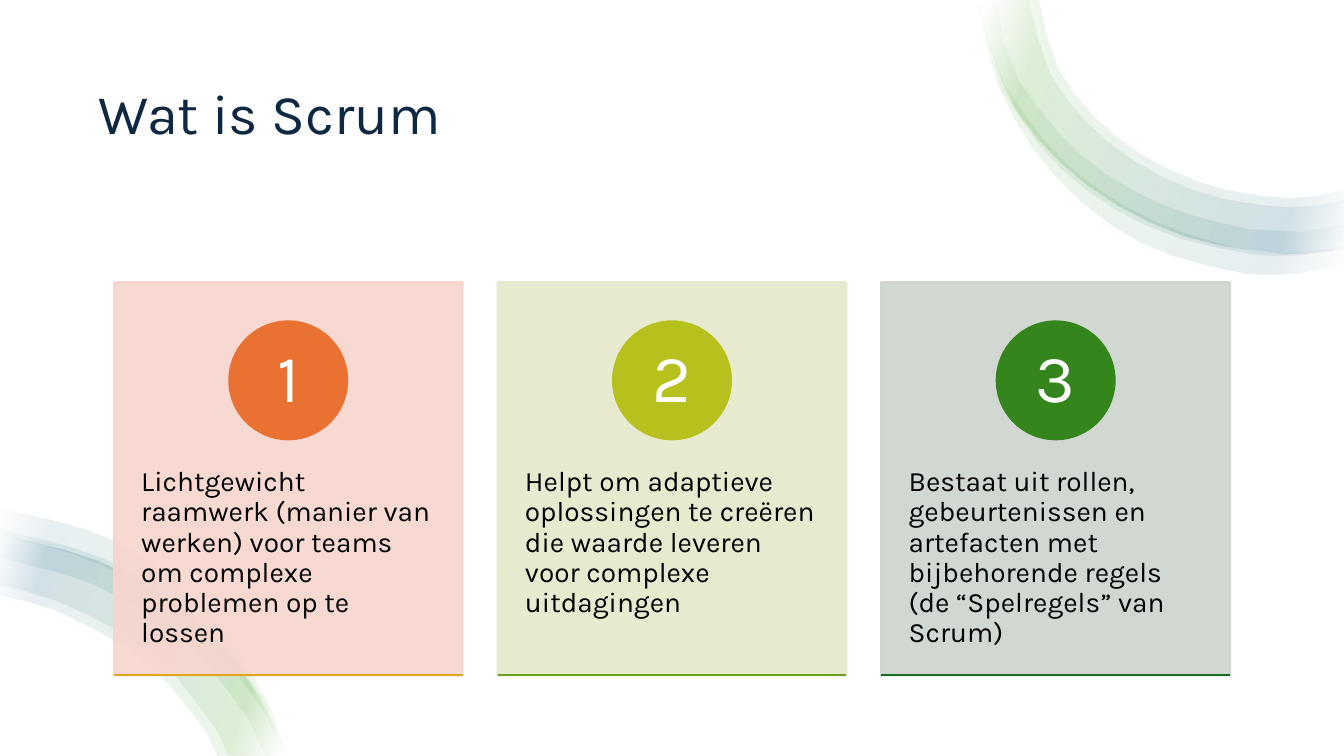
from math import dist

from lxml.etree import SubElement
from pptx import Presentation
from pptx.dml.color import RGBColor
from pptx.enum.shapes import MSO_CONNECTOR, MSO_SHAPE
from pptx.enum.text import MSO_ANCHOR, PP_ALIGN
from pptx.oxml.ns import qn
from pptx.util import Cm, Pt

FONT = "Karla"
SWIRL_UNIT = 2.54
SWIRL_STOPS = [(2, "FFFFFF"), (16, "4EA72E"), (85, "156082"), (100, "FFFFFF")]

RIGHT_RIM = [(.03, 0), (.04, .2), (.39, 1.1), (1.1, 1.84), (2.04, 2.33),
             (3.09, 2.51), (3.63, 2.45)]
RIGHT_BANDS = [
    (RIGHT_RIM,
     [(.61, 0), (.8, .68), (1.36, 1.34), (2.17, 1.79), (3.09, 1.96), (3.63, 1.88)]),
    (RIGHT_RIM,
     [(.51, 0), (.72, .73), (1.3, 1.41), (2.14, 1.88), (3.09, 2.05), (3.63, 1.98)]),
    ([(.03, 0), (.08, .43), (.24, .89), (.84, 1.68), (1.69, 2.24),
      (2.69, 2.51), (3.21, 2.52), (3.63, 2.46)],
     [(.19, 0), (.25, .39), (.42, .81), (1.01, 1.52), (1.8, 2.01),
      (2.72, 2.27), (3.19, 2.29), (3.63, 2.23)]),
    ([(.01, 0), (.02, .13), (.21, .87), (.76, 1.74), (1.61, 2.4),
      (2.66, 2.71), (3.22, 2.7), (3.63, 2.62)],
     [(.04, 0), (.1, .37), (.27, .84), (.89, 1.63), (1.73, 2.18),
      (2.69, 2.48), (3.2, 2.5), (3.63, 2.45)]),
]

LEFT_RIM = [(2.82, 2.5), (2.76, 2.3), (2.35, 1.59), (1.73, 1), (.96, .56), (0, .3)]
LEFT_BANDS = [
    ([(2.85, 2.5), (2.71, 2.08), (2.1, 1.11), (1.15, .38), (0, .04)],
     [(2.79, 2.5), (2.64, 2.11), (1.95, 1.24), (1.02, .62), (0, .3)]),
    (LEFT_RIM,
     [(2.15, 2.5), (2.05, 2.28), (1.43, 1.56), (.53, 1.05), (0, .91)]),
    ([(2.83, 2.5), (2.68, 2.05), (2, 1.18), (1.06, .56), (0, .26)],
     [(2.63, 2.5), (2.47, 2.15), (1.82, 1.36), (.94, .81), (0, .54)]),
    (LEFT_RIM,
     [(2.26, 2.5), (2.14, 2.24), (1.5, 1.48), (.56, .96), (0, .81)]),
]

CARDS = [
    ("Lichtgewicht raamwerk (manier van werken) voor teams om complexe "
     "problemen op te lossen", "F7D5CE", "E97132", "E0A61D"),
    ("Helpt om adaptieve oplossingen te creëren die waarde leveren voor "
     "complexe uitdagingen", "E5E8CA", "B7C11E", "6BA31D"),
    ("Bestaat uit rollen, gebeurtenissen en artefacten met bijbehorende "
     "regels (de “Spelregels” van Scrum)", "CCD4CD", "34861C", "196B24"),
]


def paint(color_owner, color):
    color_owner.solid()
    color_owner.fore_color.rgb = RGBColor.from_string(color)


def assign(target, values):
    for name, value in values.items():
        setattr(target, name, value)


def set_alpha(color_element, percent):
    SubElement(color_element, qn("a:alpha"), val=str(percent * 1000))


def write(shape, text, size, color, frame_format, paragraph_format):
    frame = shape.text_frame
    assign(frame, {"word_wrap": True, **frame_format})
    paragraph = frame.paragraphs[0]
    paragraph.text = text
    assign(paragraph, {"line_spacing": 0.9, **paragraph_format})
    font = paragraph.runs[0].font
    assign(font, {"name": FONT, "size": Pt(size)})
    paint(font.fill, color)


def smooth(points, density=3):
    last = len(points) - 1
    tangents = []
    for index in range(last + 1):
        before, after = points[max(index - 1, 0)], points[min(index + 1, last)]
        length = dist(before, points[index]) + dist(points[index], after)
        tangents.append([(b - a) / length for a, b in zip(before, after)])
    curve = [points[0]]
    for index in range(last):
        start, end = points[index], points[index + 1]
        length = dist(start, end)
        steps = max(1, round(length * density))
        for step in range(1, steps + 1):
            t = step / steps
            curve.append([
                (2 * t**3 - 3 * t**2 + 1) * start[axis]
                + (3 * t**2 - 2 * t**3) * end[axis]
                + (t**3 - 2 * t**2 + t) * length * tangents[index][axis]
                + (t**3 - t**2) * length * tangents[index + 1][axis]
                for axis in (0, 1)])
    return curve


def add_swirl(slide, left, top, bands, angle):
    for outer, inner in bands:
        outline = [(Cm(x * SWIRL_UNIT), Cm(y * SWIRL_UNIT))
                   for x, y in smooth(outer) + smooth(inner)[::-1]]
        builder = slide.shapes.build_freeform(*outline[0])
        builder.add_line_segments(outline[1:], close=True)
        band = builder.convert_to_shape(Cm(left), Cm(top))
        gradient = SubElement(band._element.spPr, qn("a:gradFill"), rotWithShape="1")
        stops = SubElement(gradient, qn("a:gsLst"))
        for position, color in SWIRL_STOPS:
            stop = SubElement(stops, qn("a:gs"), pos=str(position * 1000))
            set_alpha(SubElement(stop, qn("a:srgbClr"), val=color), 10)
        SubElement(gradient, qn("a:lin"), ang=str(angle * 60000), scaled="0")
        band.line.fill.background()
        band.shadow.inherit = False


def add_filled(slide, kind, left, top, width, height, color):
    shape = slide.shapes.add_shape(kind, Cm(left), Cm(top), Cm(width), Cm(height))
    shape.shadow.inherit = False
    paint(shape.fill, color)
    paint(shape.line.fill, color)
    shape.line.width = Pt(1.5)
    return shape


def add_card(slide, left, top, width, height, number, card):
    text, panel_color, badge_color, rule_color = card
    panel = add_filled(slide, MSO_SHAPE.RECTANGLE, left, top, width, height, panel_color)
    for color_element in panel._element.spPr.iter(qn("a:srgbClr")):
        set_alpha(color_element, 90)

    body = slide.shapes.add_textbox(
        Cm(left), Cm(top + 3.76), Cm(width), Cm(height - 3.97))
    write(body, text, 20, "000000",
          {"margin_left": Cm(0.69), "margin_right": Cm(0.69),
           "margin_top": Cm(0.91), "margin_bottom": Cm(0.91)}, {})

    diameter, inset = 2.97, 0.43
    badge_left, badge_top = left + (width - diameter) / 2, top + 0.99
    add_filled(slide, MSO_SHAPE.OVAL, badge_left, badge_top, diameter, diameter, badge_color)
    side = Cm(diameter - 2 * inset)
    label = slide.shapes.add_textbox(
        Cm(badge_left + inset), Cm(badge_top + inset), side, side)
    write(label, str(number), 48, "FFFFFF",
          {"vertical_anchor": MSO_ANCHOR.MIDDLE,
           "margin_left": Cm(0.23), "margin_right": Cm(0.23),
           "margin_top": Cm(0.03), "margin_bottom": Cm(0.03)},
          {"alignment": PP_ALIGN.CENTER})

    bottom = Cm(top + height)
    rule = slide.shapes.add_connector(
        MSO_CONNECTOR.STRAIGHT, Cm(left), bottom, Cm(left + width), bottom)
    paint(rule.line.fill, rule_color)
    rule.line.width = Pt(1.5)
    SubElement(rule._element.spPr, qn("a:effectLst"))


def add_title(slide, left, top, width, height):
    title = slide.shapes.title
    assign(title, {"left": Cm(left), "top": Cm(top),
                   "width": Cm(width), "height": Cm(height)})
    write(title, "Wat is Scrum", 40, "0E2841",
          {"vertical_anchor": MSO_ANCHOR.MIDDLE}, {"alignment": PP_ALIGN.LEFT})


def main():
    presentation = Presentation()
    assign(presentation, {"slide_width": Cm(33.87), "slide_height": Cm(19.05)})
    slide = presentation.slides.add_slide(presentation.slide_layouts[5])
    paint(slide.background.fill, "FFFFFF")
    add_title(slide, 2.24, 1.27, 29.39, 3.3)
    add_swirl(slide, 24.64, 0, RIGHT_BANDS, 20)
    add_swirl(slide, 0, 12.7, LEFT_BANDS, 200)
    for index, card in enumerate(CARDS):
        add_card(slide, 2.87 + index * 9.67, 7.11, 8.79, 9.91, index + 1, card)
    presentation.save("out.pptx")


if __name__ == "__main__":
    main()
